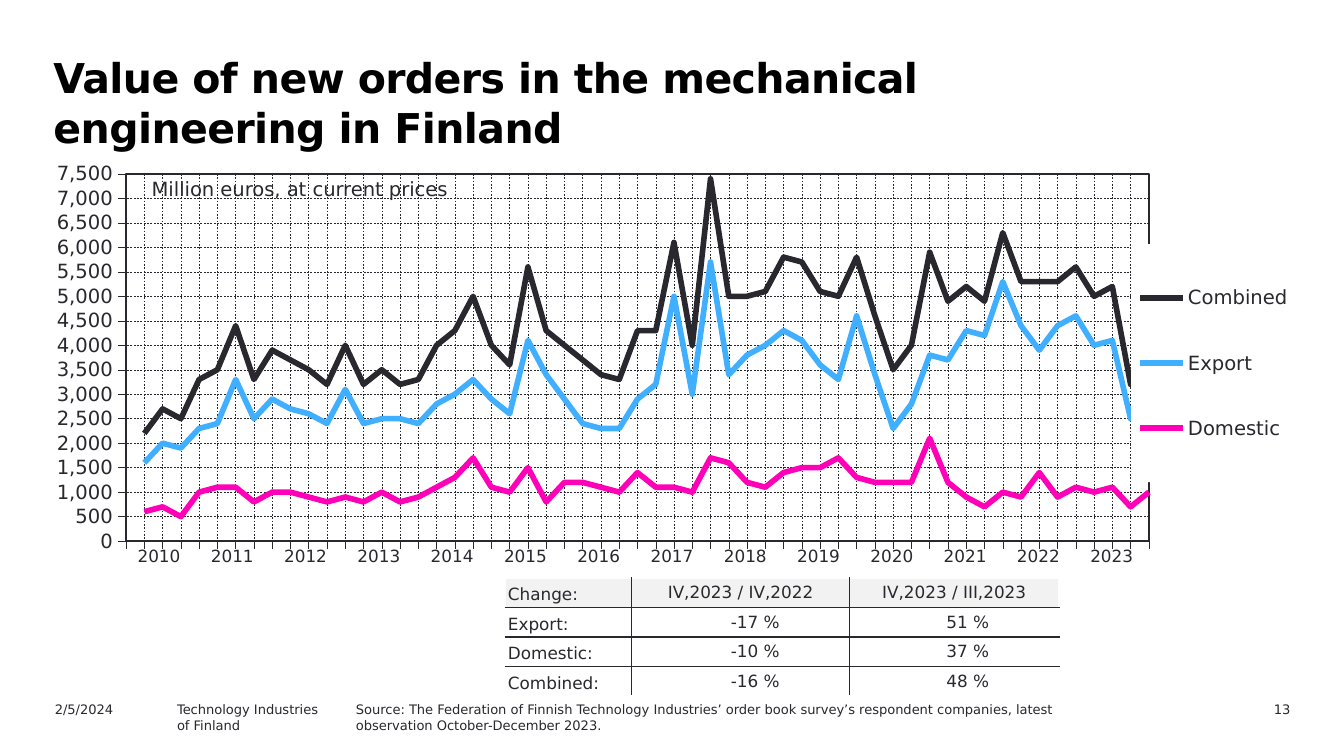
"""Build a slide on the value of new orders in Finnish mechanical engineering."""
import pptx
import pptx.chart.data
import pptx.dml.color
import pptx.enum.chart
import pptx.enum.dml
import pptx.enum.text
import pptx.oxml
import pptx.oxml.ns
import pptx.util

Pt = pptx.util.Pt
qn = pptx.oxml.ns.qn
ALIGN = pptx.enum.text.PP_ALIGN
ANCHOR = pptx.enum.text.MSO_ANCHOR
NAMESPACES = pptx.oxml.ns.nsdecls("a", "c")
NO_STYLE = "{2D5ABB26-0587-4C30-8999-92F81FD0307C}"
INK, WHITE, PALE = "29282E", "FFFFFF", "F2F2F2"

ORDERS = {
    "Combined": ("29282E", [
        None, 2200, 2700, 2500, 3300, 3500, 4400, 3300, 3900, 3700, 3500, 3200, 4000, 3200, 3500,
        3200, 3300, 4000, 4300, 5000, 4000, 3600, 5600, 4300, 4000, 3700, 3400, 3300, 4300, 4300,
        6100, 4000, 7400, 5000, 5000, 5100, 5800, 5700, 5100, 5000, 5800, 4600, 3500, 4000, 5900,
        4900, 5200, 4900, 6300, 5300, 5300, 5300, 5600, 5000, 5200, 3200, 4700]),
    "Export": ("40AFFF", [
        None, 1600, 2000, 1900, 2300, 2400, 3300, 2500, 2900, 2700, 2600, 2400, 3100, 2400, 2500,
        2500, 2400, 2800, 3000, 3300, 2900, 2600, 4100, 3400, 2900, 2400, 2300, 2300, 2900, 3200,
        5000, 3000, 5700, 3400, 3800, 4000, 4300, 4100, 3600, 3300, 4600, 3400, 2300, 2800, 3800,
        3700, 4300, 4200, 5300, 4400, 3900, 4400, 4600, 4000, 4100, 2500, 3800]),
    "Domestic": ("FF00B8", [
        None, 600, 700, 500, 1000, 1100, 1100, 800, 1000, 1000, 900, 800, 900, 800, 1000,
        800, 900, 1100, 1300, 1700, 1100, 1000, 1500, 800, 1200, 1200, 1100, 1000, 1400, 1100,
        1100, 1000, 1700, 1600, 1200, 1100, 1400, 1500, 1500, 1700, 1300, 1200, 1200, 1200, 2100,
        1200, 900, 700, 1000, 900, 1400, 900, 1100, 1000, 1100, 700, 1000]),
}
CHANGES = [
    ["Change:", "IV,2023 / IV,2022", "IV,2023 / III,2023"],
    ["Export:", "-17 %", "51 %"],
    ["Domestic:", "-10 %", "37 %"],
    ["Combined:", "-16 %", "48 %"],
]
YEARS = [str(year) for year in range(2010, 2024)]


def color(value):
    return pptx.dml.color.RGBColor.from_string(value)


def manual_layout(x, y, width, height, inner=False):
    target = '<c:layoutTarget val="inner"/>' if inner else ""
    return pptx.oxml.parse_xml(
        f'<c:layout {NAMESPACES}><c:manualLayout>{target}'
        '<c:xMode val="edge"/><c:yMode val="edge"/>'
        f'<c:x val="{x}"/><c:y val="{y}"/><c:w val="{width}"/><c:h val="{height}"/>'
        '</c:manualLayout></c:layout>')


def replace_child(parent, child, index):
    for present in parent.findall(child.tag):
        parent.remove(present)
    parent.insert(index, child)


class SlideBuilder:
    def __init__(self, presentation, font="DejaVu Sans"):
        self.font = font
        self.slide = presentation.slides.add_slide(presentation.slide_layouts[6])

    def style(self, font, size, bold=False, fill=INK):
        font.name, font.size, font.bold = self.font, Pt(size), bold
        font.color.rgb = color(fill)

    def run(self, paragraph, text, size, bold=False, fill=INK):
        run = paragraph.add_run()
        run.text = text
        self.style(run.font, size, bold, fill)
        return run

    def text(self, lines, left, top, width, height, size=7, bold=False, fill=INK,
             align=ALIGN.LEFT, wrap=True, spacing=0):
        frame = self.slide.shapes.add_textbox(Pt(left), Pt(top), Pt(width), Pt(height)).text_frame
        frame.word_wrap = wrap
        for index, line in enumerate(lines):
            paragraph = frame.add_paragraph() if index else frame.paragraphs[0]
            paragraph.alignment = align
            run = self.run(paragraph, line, size, bold, fill)
            if spacing:
                run.font._element.set("spc", str(spacing))

    def table(self, rows, left, top, widths, row_height):
        frame = self.slide.shapes.add_table(
            len(rows), len(widths), Pt(left), Pt(top), Pt(sum(widths)), Pt(row_height * len(rows)))
        table = frame.table
        table.first_row = table.horz_banding = False
        table._tbl.tblPr.find(qn("a:tableStyleId")).text = NO_STYLE
        for column, width in zip(table.columns, widths):
            column.width = Pt(width)
        for row_index, row in enumerate(rows):
            table.rows[row_index].height = Pt(row_height)
            for column_index, text in enumerate(row):
                cell = table.cell(row_index, column_index)
                cell.fill.background()
                paragraph = cell.text_frame.paragraphs[0]
                paragraph.alignment = ALIGN.CENTER
                self.run(paragraph, text, 9)
        return table

    def borders(self, cell, **sides):
        for index, side in enumerate("LRTB"):
            cell._tc.get_or_add_tcPr().insert(index, pptx.oxml.parse_xml(
                f'<a:ln{side} {NAMESPACES} w="12700"><a:solidFill>'
                f'<a:srgbClr val="{sides[side]}"/></a:solidFill></a:ln{side}>'))

    def change_table(self, rows, left, top, widths, row_height):
        table = self.table(rows, left, top, widths, row_height)
        last_row, last_column = len(rows) - 1, len(widths) - 1
        for row in range(len(rows)):
            for column in range(len(widths)):
                cell = table.cell(row, column)
                is_value = row > 0 and column > 0
                cell.margin_left = cell.margin_top = cell.margin_bottom = Pt(1.44)
                cell.margin_right = Pt(37.44 if is_value else 1.44)
                cell.vertical_anchor = ANCHOR.MIDDLE if column else ANCHOR.BOTTOM
                if is_value or not column:
                    cell.text_frame.paragraphs[0].alignment = ALIGN.RIGHT if column else ALIGN.LEFT
                cell.fill.solid()
                cell.fill.fore_color.rgb = color(WHITE if row else PALE)
                self.borders(cell, L=INK if column else WHITE, T=INK if row else WHITE,
                             R=INK if column < last_column else WHITE,
                             B=INK if row < last_row else WHITE)

    def axis(self, axis):
        axis.has_major_gridlines = True
        axis.major_tick_mark = pptx.enum.chart.XL_TICK_MARK.OUTSIDE
        axis.minor_tick_mark = pptx.enum.chart.XL_TICK_MARK.NONE
        for line, width in ((axis.format.line, 0.22), (axis.major_gridlines.format.line, 0.25)):
            line.color.rgb = color(INK)
            line.width = Pt(width)
        axis.major_gridlines.format.line.dash_style = pptx.enum.dml.MSO_LINE.DASH

    def line_chart(self, series_values, left, top, width, height):
        data = pptx.chart.data.CategoryChartData()
        count = max(len(values) for _, values in series_values.values())
        data.categories = [str(number) for number in range(1, count + 1)]
        for name, (_, values) in series_values.items():
            data.add_series(name, values)
        chart = self.slide.shapes.add_chart(
            pptx.enum.chart.XL_CHART_TYPE.LINE, Pt(left), Pt(top), Pt(width), Pt(height), data).chart
        chart.has_title = False
        self.style(chart.font, 10.5)
        for series, (stroke, _) in zip(chart.plots[0].series, series_values.values()):
            series.smooth = False
            series.marker.style = pptx.enum.chart.XL_MARKER_STYLE.NONE
            series.format.line.color.rgb = color(stroke)
            series.format.line.width = Pt(3)
        self.axis(chart.category_axis)
        chart.category_axis.tick_label_position = pptx.enum.chart.XL_TICK_LABEL_POSITION.NONE
        value_axis = chart.value_axis
        self.axis(value_axis)
        value_axis.minimum_scale, value_axis.maximum_scale, value_axis.major_unit = 0, 7500, 500
        value_axis.tick_labels.number_format = "#,##0"
        value_axis.tick_labels.number_format_is_linked = False
        self.style(value_axis.tick_labels.font, 10.5)
        element = value_axis._element
        crossing = pptx.oxml.parse_xml(f'<c:crossBetween {NAMESPACES} val="midCat"/>')
        replace_child(element, crossing, element.index(element.find(qn("c:crosses"))) + 1)
        plot_area = chart._chartSpace.chart.plotArea
        replace_child(plot_area, manual_layout(0.08, 0.04, 0.8, 0.83, inner=True), 0)
        for edge, value in (("x", 0.082), ("y", 0.041), ("w", 0.802), ("h", 0.833)):
            next(plot_area[0].iter(qn(f"c:{edge}"))).set("val", str(value))
        plot_area.append(pptx.oxml.parse_xml(
            f'<c:spPr {NAMESPACES}><a:noFill/><a:ln w="9525"><a:solidFill>'
            f'<a:srgbClr val="{INK}"/></a:solidFill></a:ln></c:spPr>'))
        self.legend(chart)

    def legend(self, chart):
        chart.has_legend = True
        legend = chart.legend
        legend.position = pptx.enum.chart.XL_LEGEND_POSITION.RIGHT
        legend.include_in_layout = False
        self.style(legend.font, 10.5)
        replace_child(legend._element, manual_layout(0.87, 0.2, 0.13, 0.54), 1)
        legend._element.find(qn("c:txPr")).addprevious(pptx.oxml.parse_xml(
            f'<c:spPr {NAMESPACES}><a:solidFill><a:srgbClr val="{WHITE}"/></a:solidFill>'
            '<a:ln><a:noFill/></a:ln></c:spPr>'))


def main():
    presentation = pptx.Presentation()
    presentation.slide_width, presentation.slide_height = Pt(720), Pt(405)
    builder = SlideBuilder(presentation)
    builder.text(["Value of new orders in the mechanical engineering in Finland"],
                 21.6, 24.8, 620, 51, size=22, bold=True, fill="000000", spacing=-30)
    builder.text(["13"], 630.7, 372.2, 67.7, 13, align=ALIGN.RIGHT)
    builder.line_chart(ORDERS, 11.5, 83.5, 683.3, 236.2)
    builder.text(["Million euros, at current prices"], 74.2, 91.4, 175.7, 19.4, size=10.5, wrap=False)
    builder.change_table(CHANGES, 270.7, 309.6, [67.7, 116.6, 112.3], 15.84)
    builder.text(["Source: The Federation of Finnish Technology Industries’ order book survey’s "
                  "respondent companies, latest observation October-December 2023."],
                 183.6, 372.2, 391.7, 13)
    builder.text(["Technology Industries", "of Finland"], 87.8, 372.2, 129.6, 13)
    builder.text(["2/5/2024"], 22.3, 372.2, 72, 13)
    builder.table([YEARS], 65.5, 289.4, [550 / len(YEARS)] * len(YEARS), 22.3)
    presentation.save("out.pptx")


if __name__ == "__main__":
    main()
